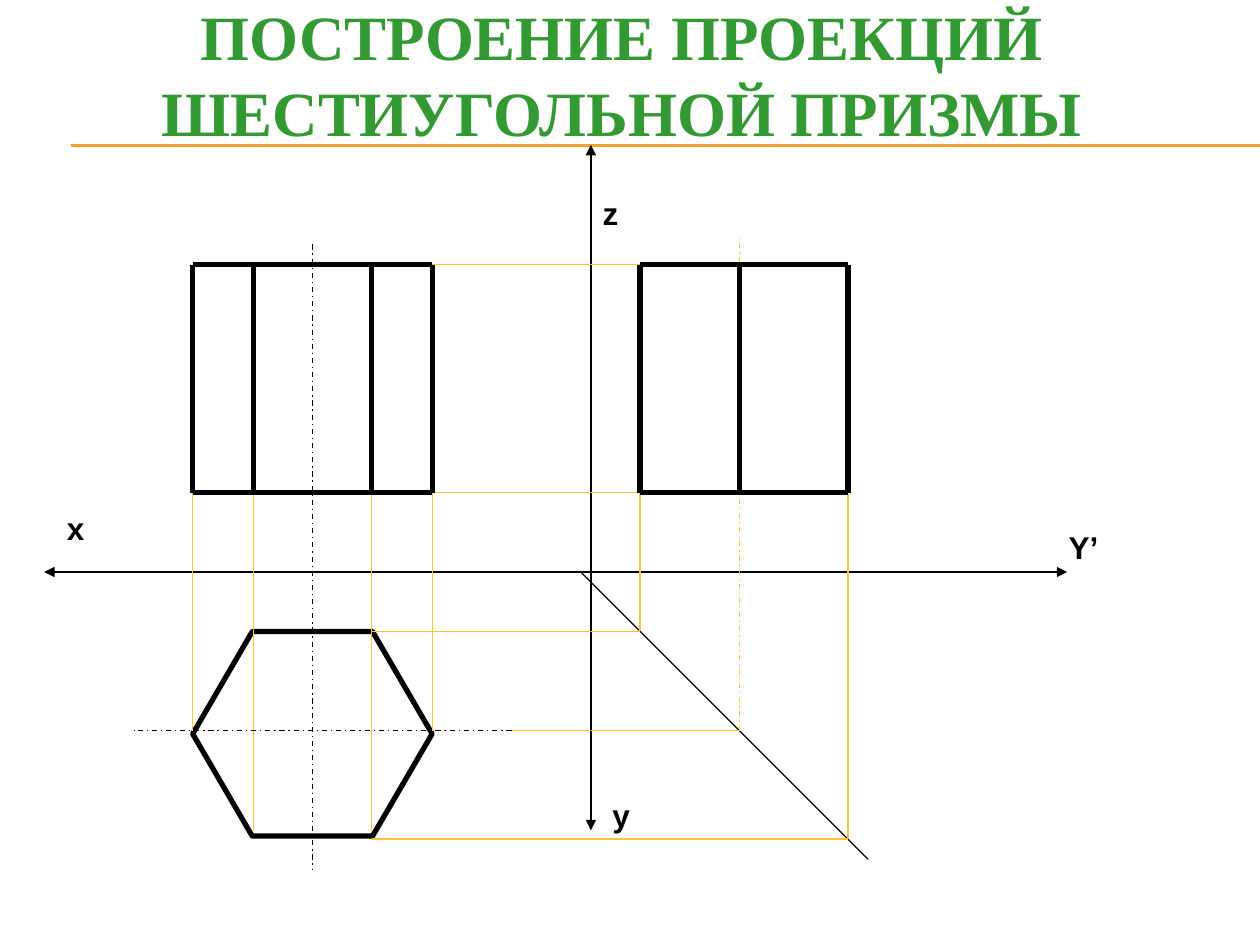
from dataclasses import dataclass
from lxml.etree import SubElement
from pptx import Presentation
from pptx.dml.color import RGBColor
from pptx.enum.dml import MSO_LINE
from pptx.enum.shapes import MSO_CONNECTOR, MSO_SHAPE
from pptx.enum.text import MSO_ANCHOR, MSO_AUTO_SIZE, PP_ALIGN
from pptx.oxml.ns import qn
from pptx.util import Inches, Pt


@dataclass(frozen=True)
class Theme:
    green: str = "339933"
    rule: str = "F0A22E"
    guide: str = "FFC42F"
    ink: str = "000000"
    serif: str = "Times New Roman"
    sans: str = "Arial"
    title: int = 36
    label: int = 18
    thin: float = 0.75
    thick: float = 3


T = Theme()
WIDTH, HEIGHT = 10, 7.5
TITLE = "ПОСТРОЕНИЕ ПРОЕКЦИЙ ШЕСТИУГОЛЬНОЙ ПРИЗМЫ"
LABELS = [("x", 0.43, 3.99, 0.34), ("y", 4.76, 6.27, 0.34),
          ("Y’", 8.38, 4.14, 0.44), ("z", 4.68, 1.49, 0.33)]

# Grid of the drawing: edges of the front and side views, levels of the plan
FRONT = (1.53, 2.01, 2.95, 3.43)
SIDE = (5.08, 5.87, 6.73)
TOP, BASE = 2.1, 3.91
BACK, MID, NEAR = 5.01, 5.8, 6.66
HEX_H = 1.63
AXIS_X, AXIS_Y = 4.69, 4.54
CENTRE = (FRONT[0] + FRONT[-1]) / 2
DASH_END = 4.06

RULES = [(0.56, y, WIDTH, y) for y in (1.15, 1.16)]
AXES = [(0.35, AXIS_Y, 8.47, AXIS_Y), (AXIS_X, 1.15, AXIS_X, 6.59)]
MITRE = [(4.61, AXIS_Y, 6.89, 6.82)]
DROPS = [(x, end, x, BASE) for x, end in zip(FRONT, (MID, 6.59, 6.59, MID))]
LEVELS = [(FRONT[-1], y, SIDE[0], y) for y in (TOP, BASE)]
DEPTHS = [(FRONT[2], BACK, SIDE[0], BACK), (DASH_END, MID, SIDE[1], MID),
          (FRONT[2], NEAR, SIDE[2], NEAR)]
RISES = [(SIDE[0], BACK, SIDE[0], BASE), (SIDE[2], NEAR, SIDE[2], BASE)]
SIDE_DASH = [(SIDE[1], MID, SIDE[1], 1.86)]
DASHES = [(CENTRE, 1.94, CENTRE, 6.9), (DASH_END, MID, 1.06, MID)]


def view(xs):
    """Edges of one upright view of the prism."""
    return ([(x, BASE, x, TOP) for x in xs]
            + [(xs[0], y, xs[-1], y) for y in (BASE, TOP)])


# lines, colour, width, dashed, arrows
LAYERS = [
    (RULES, T.rule, T.thin, False, False),
    (AXES, T.ink, T.thin, False, True),
    (MITRE, T.ink, T.thin, False, False),
    (DROPS + LEVELS + DEPTHS + RISES, T.guide, T.thin, False, False),
    (SIDE_DASH, T.guide, T.thin, True, False),
    (view(FRONT) + view(SIDE), T.ink, T.thick, False, False),
    (DASHES, T.ink, T.thin, True, False),
]


def style(par, face, size, hue):
    par.alignment = PP_ALIGN.CENTER
    par.font.name, par.font.size, par.font.bold = face, Pt(size), True
    par.font.color.rgb = RGBColor.from_string(hue)


def add_title(slide):
    box = slide.shapes.title
    box.left, box.top = Inches(0.28), 0
    box.width, box.height = Inches(9.31), Inches(1.16)
    frame = box.text_frame
    frame.text = TITLE
    frame.auto_size = MSO_AUTO_SIZE.NONE
    frame.vertical_anchor = MSO_ANCHOR.MIDDLE
    style(frame.paragraphs[0], T.serif, T.title, T.green)


def add_plan(shapes):
    plan = shapes.add_shape(
        MSO_SHAPE.HEXAGON, Inches(FRONT[0]), Inches(BACK),
        Inches(FRONT[-1] - FRONT[0]), Inches(HEX_H))
    plan.adjustments[0], plan.adjustments[1] = 0.29, 1.15
    plan.shadow.inherit = False
    plan.fill.background()
    plan.line.color.rgb = RGBColor.from_string(T.ink)
    plan.line.width = Pt(T.thick)


def add_line(shapes, ends, hue, width, dashed, arrows):
    link = shapes.add_connector(MSO_CONNECTOR.STRAIGHT, *map(Inches, ends))
    link.line.color.rgb = RGBColor.from_string(hue)
    link.line.width = Pt(width)
    if dashed:
        link.line.dash_style = MSO_LINE.DASH_DOT
    if arrows:
        for end in ("a:headEnd", "a:tailEnd"):
            SubElement(link.line._get_or_add_ln(), qn(end), type="triangle")
    SubElement(link._element.spPr, qn("a:effectLst"))


def add_label(shapes, text, left, top, width):
    box = shapes.add_textbox(*map(Inches, (left, top, width, 0.4)))
    frame = box.text_frame
    frame.text = text
    frame.word_wrap = False
    frame.auto_size = MSO_AUTO_SIZE.SHAPE_TO_FIT_TEXT
    style(frame.paragraphs[0], T.sans, T.label, T.ink)


def main():
    deck = Presentation()
    deck.slide_width, deck.slide_height = Inches(WIDTH), Inches(HEIGHT)
    slide = deck.slides.add_slide(deck.slide_layouts[5])
    add_title(slide)
    add_plan(slide.shapes)
    for lines, *look in LAYERS:
        for ends in lines:
            add_line(slide.shapes, ends, *look)
    for label in LABELS:
        add_label(slide.shapes, *label)
    deck.save("out.pptx")


if __name__ == "__main__":
    main()
